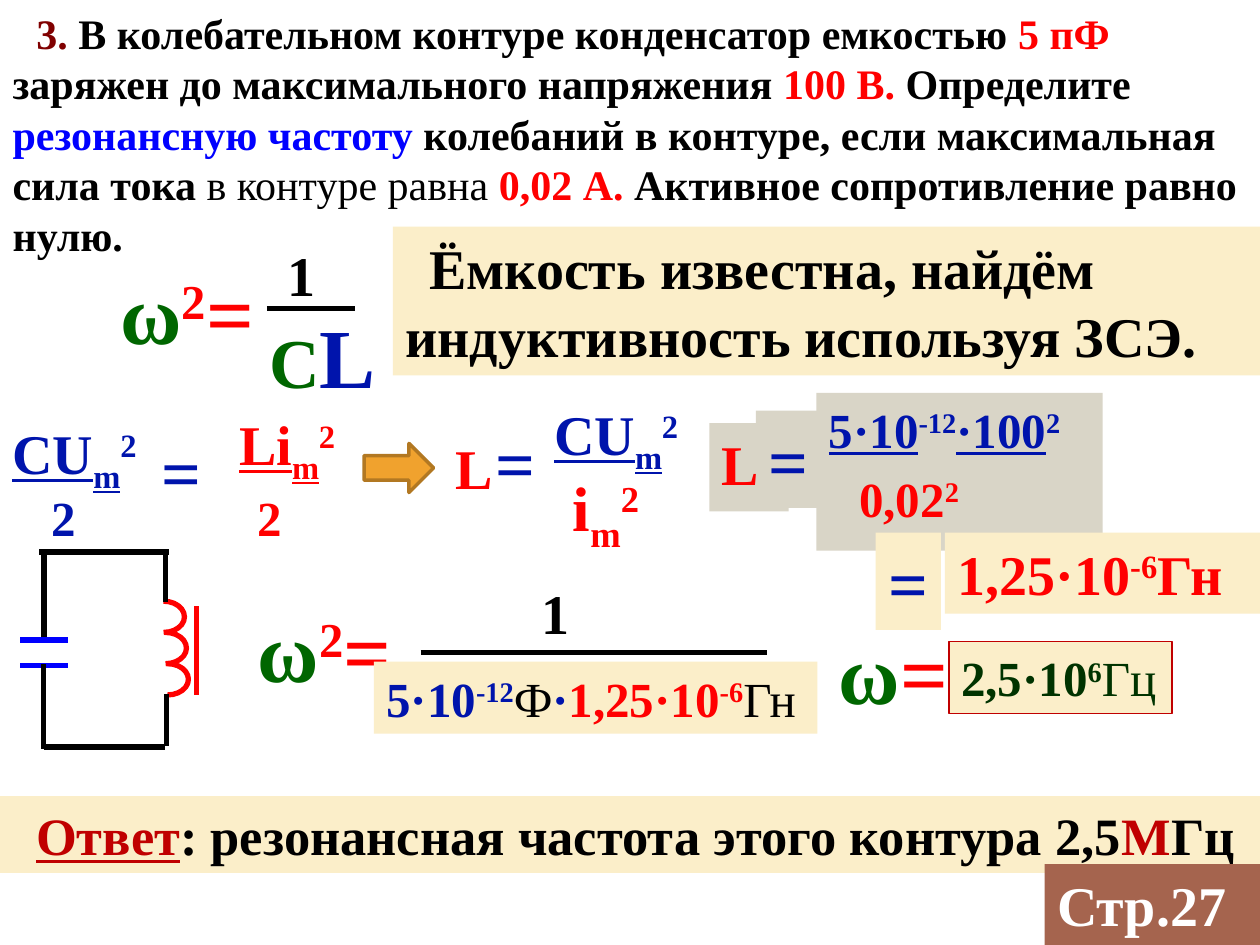
import collections

import lxml.etree
import pptx
import pptx.dml.color
import pptx.enum.shapes
import pptx.enum.text
import pptx.oxml.ns
import pptx.util

Cm = pptx.util.Cm
Pt = pptx.util.Pt
RGBColor = pptx.dml.color.RGBColor
Anchor = pptx.enum.text.MSO_ANCHOR
Align = pptx.enum.text.PP_ALIGN
Shape = pptx.enum.shapes.MSO_SHAPE

BLACK = RGBColor(0x00, 0x00, 0x00)
WHITE = RGBColor(0xFF, 0xFF, 0xFF)
RED = RGBColor(0xFF, 0x00, 0x00)
BLUE = RGBColor(0x00, 0x00, 0xFF)
NAVY = RGBColor(0x00, 0x14, 0xAC)
GREEN = RGBColor(0x00, 0x66, 0x00)
DARK_GREEN = RGBColor(0x00, 0x33, 0x00)
MAROON = RGBColor(0x80, 0x00, 0x00)
CRIMSON = RGBColor(0xC0, 0x00, 0x00)
CREAM = RGBColor(0xFB, 0xEE, 0xC9)
GRAY = RGBColor(0xD9, 0xD5, 0xC7)
BROWN = RGBColor(0xA5, 0x64, 0x4E)
ORANGE = RGBColor(0xF0, 0xA2, 0x2E)
DARK_ORANGE = RGBColor(0xB2, 0x78, 0x22)

FONT = "Times New Roman"
BASELINES = {"^": "30000", "_": "-25000"}
Box = collections.namedtuple("Box", "left top width height")


def inside(box, left, top, width, height):
    return Box(box.left + left, box.top + top, width, height)


def fill_frame(frame, runs, size, anchor=Anchor.MIDDLE, align=Align.LEFT, indent=0):
    frame.auto_size = pptx.enum.text.MSO_AUTO_SIZE.NONE
    frame.vertical_anchor = anchor
    paragraph = frame.paragraphs[0]
    paragraph.alignment = align
    if indent:
        paragraph._p.get_or_add_pPr().set("indent", str(Cm(indent)))
    for text, color, *marks in runs:
        run = paragraph.add_run()
        run.text = text
        run.font.name = FONT
        run.font.size = Pt(size)
        run.font.color.rgb = color
        run.font.bold = "regular" not in marks
        run.font.underline = "underline" in marks
        for mark in marks:
            if mark in BASELINES:
                run._r.get_or_add_rPr().set("baseline", BASELINES[mark])
            elif isinstance(mark, int):
                run.font.size = Pt(mark)


def add_label(slide, box, runs, size, fill=None, line=None, wrap=True, **layout):
    shape = slide.shapes.add_textbox(*map(Cm, box))
    shape.text_frame.word_wrap = wrap
    if fill is not None:
        shape.fill.solid()
        shape.fill.fore_color.rgb = fill
    if line is not None:
        shape.line.color.rgb = line
        shape.line.width = Pt(0.75)
    fill_frame(shape.text_frame, runs, size, **layout)


def add_term(slide, box, runs, size, fill=None):
    add_label(slide, box, runs, size, fill, anchor=Anchor.TOP)


def add_equals(slide, box, left, top, fill=None):
    add_label(slide, inside(box, left, top, 1.32, 1.96), [("=", NAVY)], 40, fill,
              wrap=False, align=Align.CENTER)


def add_line(slide, box, start_x, start_y, end_x, end_y, color=BLACK):
    connector = slide.shapes.add_connector(
        pptx.enum.shapes.MSO_CONNECTOR.STRAIGHT,
        Cm(box.left + start_x), Cm(box.top + start_y),
        Cm(box.left + end_x), Cm(box.top + end_y))
    connector.line.color.rgb = color
    connector.line.width = Pt(3)
    lxml.etree.SubElement(connector._element.spPr, pptx.oxml.ns.qn("a:effectLst"))


def add_problem(slide, box):
    title = slide.shapes.title
    title.left, title.top, title.width, title.height = map(Cm, box)
    title.text_frame.word_wrap = True
    fill_frame(title.text_frame, [
        ("3.", MAROON),
        (" В колебательном контуре конденсатор емкостью ", BLACK),
        ("5 пФ", RED),
        (" заряжен до максимального напряжения ", BLACK),
        ("100 В.", RED),
        (" Определите ", BLACK),
        ("резонансную частоту", BLUE),
        (" колебаний в контуре, если максимальная сила тока ", BLACK),
        ("в контуре равна ", BLACK, "regular"),
        ("0,02 А.", RED),
        (" Активное сопротивление равно нулю.", BLACK)], 24, indent=0.48)


def add_omega(slide, box, squared=True):
    power = [("2", RED, "^")] if squared else []
    add_label(slide, box, [("ω", GREEN), *power, ("=", RED)], 48)


def add_frequency_formula(slide, box, one_left, bar_left, bar_right, bar_top):
    add_omega(slide, inside(box, 0, 0.4, 3.3, 2.31))
    add_term(slide, inside(box, one_left, 0, 1.22, 1.6), [("1", BLACK)], 32)
    add_line(slide, box, bar_left, bar_top, bar_right, bar_top)


def add_charge_energy(slide, box):
    add_term(slide, box, [("CU", NAVY, "underline"), ("m", NAVY, "underline", "_"),
                          ("2", NAVY, "^")], 32)


def add_energy_balance(slide, box):
    add_charge_energy(slide, inside(box, 0, 0.18, 3.38, 3.18))
    add_term(slide, inside(box, 0.79, 1.57, 1.17, 1.98), [("2", NAVY)], 28)
    add_term(slide, inside(box, 4.57, 0, 3.18, 2.69),
             [("Li", RED, "underline"), ("m", RED, "underline", "_"), ("2", RED, "^")], 32)
    add_term(slide, inside(box, 4.95, 1.57, 1.6, 1.6), [("2", RED)], 28)
    add_equals(slide, box, 3, 0.38)


def add_arrow(slide, box):
    arrow = slide.shapes.add_shape(Shape.RIGHT_ARROW, *map(Cm, box))
    arrow.shadow.inherit = False
    arrow.fill.solid()
    arrow.fill.fore_color.rgb = ORANGE
    arrow.line.color.rgb = DARK_ORANGE
    arrow.line.width = Pt(2)


def add_inductance(slide, box):
    add_term(slide, inside(box, 0, 0.69, 1.6, 1.78), [("L", RED)], 32)
    add_equals(slide, box, 0.79, 0.41)
    add_charge_energy(slide, inside(box, 1.98, 0, 3.38, 3.18))
    add_term(slide, inside(box, 2.36, 1.4, 2.39, 1.98),
             [("i", RED), ("m", RED, "_"), ("2", RED, "^")], 36)


def add_substitution(slide, box):
    add_term(slide, inside(box, 0, 0.61, 1.6, 1.78), [("L", RED)], 32, GRAY)
    add_equals(slide, box, 0.94, 0.36, GRAY)
    add_term(slide, inside(box, 2.16, 0, 5.77, 3.18),
             [("5·10", NAVY, "underline"), ("-12", NAVY, "^"),
              ("·100", NAVY, "underline"), ("2", NAVY, "^")], 28, GRAY)
    add_term(slide, inside(box, 2.77, 1.4, 2.77, 1.4),
             [("0,02", RED), ("2", RED, "^")], 28, GRAY)
    add_equals(slide, box, 3.35, 2.82, CREAM)
    add_label(slide, inside(box, 4.75, 2.82, 6.35, 1.63),
              [("1,25·10", RED), ("-6", RED, "^"), ("Гн", RED)], 32, CREAM)


def add_result(slide, box):
    add_omega(slide, inside(box, 0, 0, 3.3, 2.31), squared=False)
    add_label(slide, inside(box, 2.47, 0.56, 4.5, 1.45),
              [("2,5·10", DARK_GREEN), ("6", DARK_GREEN, "^"),
               ("Гц", DARK_GREEN, "regular")], 28, CREAM, CRIMSON)


def add_circuit(slide, box):
    for plate_top in (1.77, 2.28):
        add_line(slide, box, 0, plate_top, 0.97, plate_top, BLUE)
    for turn in range(3):
        turn_box = inside(box, 2.47 + 0.04 * turn, 0.99 + 0.63 * turn, 0.84, 0.63)
        arc = slide.shapes.add_shape(Shape.ARC, *map(Cm, turn_box))
        arc.adjustments[0], arc.adjustments[1] = 162, 54
        arc.shadow.inherit = False
        arc.fill.background()
        arc.line.color.rgb = RED
        arc.line.width = Pt(3)
    for wire in ((0.48, 1.72, 0.48, 0.02), (0.46, 3.96, 0.46, 2.26),
                 (2.92, 1.01, 2.92, 0), (0.48, 3.93, 2.92, 3.93),
                 (2.95, 3.91, 2.95, 2.87), (0.38, 0, 3, 0)):
        add_line(slide, box, *wire)
    add_line(slide, box, 3.55, 1.09, 3.55, 2.89, RED)


def main():
    presentation = pptx.Presentation()
    presentation.slide_width = Cm(25.4)
    presentation.slide_height = Cm(19.05)
    slide = presentation.slides.add_slide(presentation.slide_layouts[5])

    add_problem(slide, Box(0, 0, 25.4, 5.38))
    add_frequency_formula(slide, Box(2.18, 4.72, 6, 3.15), 3.36, 3.2, 4.98, 1.5)
    add_term(slide, Box(5.18, 6.02, 3.02, 1.85), [("C", GREEN), ("L", NAVY, 48)], 40)
    add_label(slide, Box(7.92, 4.57, 17.48, 3),
              [("Ёмкость известна, найдём индуктивность используя ЗСЭ.", BLACK)],
              32, CREAM, indent=0.48)
    add_energy_balance(slide, Box(0, 8.13, 7.75, 3.55))
    add_arrow(slide, Box(7.34, 8.94, 1.4, 0.99))
    add_inductance(slide, Box(8.94, 7.92, 5.36, 3.38))
    add_substitution(slide, Box(14.3, 7.92, 11.1, 4.78))
    add_frequency_formula(slide, Box(4.95, 11.53, 11.53, 3.26), 5.72, 3.53, 10.52, 1.63)
    add_label(slide, Box(7.54, 13.34, 8.94, 1.45),
              [("5·10", NAVY), ("-12", NAVY, "^"), ("Ф", BLACK, "regular"), ("·", NAVY),
               ("1,25·10", RED), ("-6", RED, "^"), ("Гн", BLACK, "regular")], 28, CREAM)
    add_result(slide, Box(16.66, 12.37, 6.97, 2.31))
    add_label(slide, Box(0, 16.05, 25.4, 1.55),
              [("Ответ", CRIMSON, "underline"),
               (": резонансная частота этого контура 2,5", BLACK),
               ("М", CRIMSON), ("Гц", BLACK)], 30, CREAM, indent=0.48)
    add_circuit(slide, Box(0.41, 11.13, 3.55, 3.96))
    add_label(slide, Box(21.06, 17.42, 4.34, 1.63), [("Стр.27", WHITE)], 32, BROWN)

    presentation.save("out.pptx")


if __name__ == "__main__":
    main()
